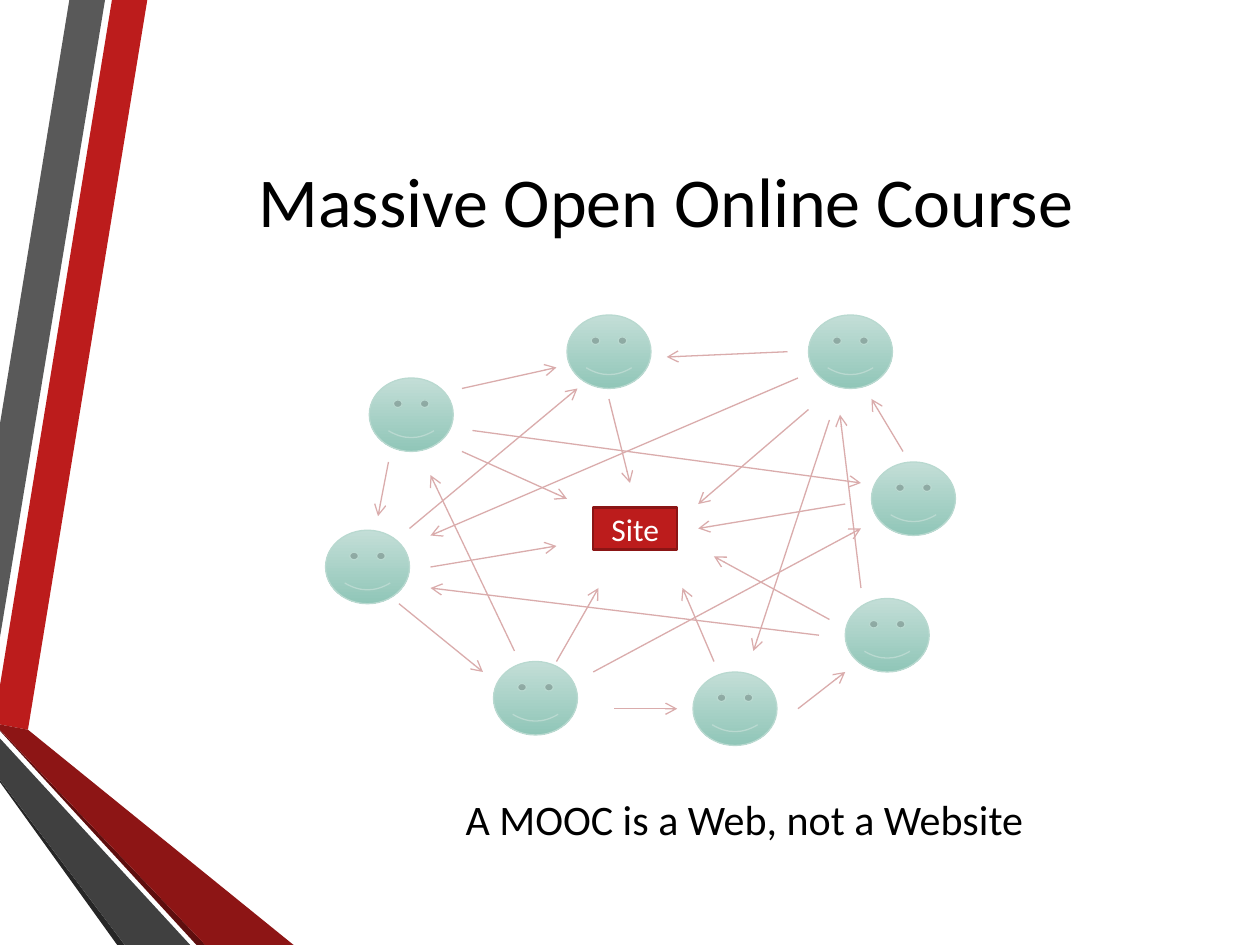
"""Build a slide showing a massive open online course as a web of people around a site."""
from lxml import etree
from pptx import Presentation
from pptx.dml.color import RGBColor
from pptx.enum.shapes import MSO_CONNECTOR, MSO_SHAPE
from pptx.enum.text import MSO_ANCHOR, MSO_AUTO_SIZE, PP_ALIGN
from pptx.oxml.ns import qn
from pptx.util import Pt

STRAIGHT = MSO_CONNECTOR.STRAIGHT
RECTANGLE, SMILEY = MSO_SHAPE.RECTANGLE, MSO_SHAPE.SMILEY_FACE
MIDDLE, TOP = MSO_ANCHOR.MIDDLE, MSO_ANCHOR.TOP
CENTER, LEFT = PP_ALIGN.CENTER, PP_ALIGN.LEFT
NO_FIT, FIT_SHAPE = MSO_AUTO_SIZE.NONE, MSO_AUTO_SIZE.SHAPE_TO_FIT_TEXT

BLACK = RGBColor(0x00, 0x00, 0x00)
WHITE = RGBColor(0xFF, 0xFF, 0xFF)
RED = RGBColor(0xBC, 0x1C, 0x1C)
CRIMSON = RGBColor(0x8D, 0x15, 0x15)
MAROON = RGBColor(0x5E, 0x0E, 0x0E)
GRAY = RGBColor(0x59, 0x59, 0x59)
CHARCOAL = RGBColor(0x40, 0x40, 0x40)
NEAR_BLACK = RGBColor(0x26, 0x26, 0x26)
SITE_EDGE = RGBColor(0x8B, 0x15, 0x15)
FACE_TOP = RGBColor(0xC3, 0xDE, 0xD7)
FACE_BOTTOM = RGBColor(0x90, 0xC6, 0xB8)
FACE_EDGE = RGBColor(0xB9, 0xD9, 0xD0)
ARROW = RGBColor(0xDA, 0xAC, 0xAC)

RIBBONS = [
    (RED, [(0, 391.7), (0, 414), (16, 417), (84.2, 0), (64, 0)]),
    (GRAY, [(60, 0), (39.6, 0), (0, 242), (0, 364)]),
    (NEAR_BLACK, [(0, 445.7), (0, 447), (67, 540), (71.3, 540)]),
    (MAROON, [(0, 417), (0, 417.6), (112.3, 540), (117.4, 540)]),
    (CRIMSON, [(0, 417), (117.4, 540), (167.8, 540), (16, 417), (0, 414)]),
    (CHARCOAL, [(0, 445.7), (71.3, 540), (108.7, 540), (0, 422)]),
]
FACES = [(498, 264), (483, 342), (462, 180), (396, 384),
         (282, 378), (186, 303), (211, 216), (324, 180)]
ARROWS_TO_SITE = [
    (462, 234, 399, 288), (483, 288, 399, 302), (474, 354, 408, 318),
    (408, 378, 390, 336), (348, 228, 360, 276), (264, 258, 324, 285),
    (246, 324, 318, 312), (318, 378, 342, 336),
]
ARROWS_BETWEEN_FACES = [
    (270, 246, 492, 276), (456, 216, 246, 306), (264, 222, 318, 210),
    (474, 240, 430.5, 372), (339, 384, 492, 302), (234, 302, 330, 222),
    (492, 336, 480, 237), (516, 258, 498, 228), (450, 201, 381, 204),
    (222, 264, 216, 295), (294, 372, 246, 271.5), (351, 405, 387, 405),
    (468, 363, 246, 336), (228, 345, 276, 384), (456, 405, 483, 384),
]


def write(sp, text, size, color, align=CENTER, anchor=MIDDLE, fit=NO_FIT):
    """Put one formatted line of text in a shape."""
    tf = sp.text_frame
    for name, value in {"word_wrap": True, "vertical_anchor": anchor, "auto_size": fit}.items():
        setattr(tf, name, value)
    p = tf.paragraphs[0]
    p.alignment = align
    r = p.add_run()
    r.text = text
    for name, value in {"name": "Calibri", "size": Pt(size), "bold": False}.items():
        setattr(r.font, name, value)
    r.font.color.rgb = color


def outline(sp, color, width):
    """Set the line colour and width of a shape or connector."""
    sp.line.color.rgb = color
    sp.line.width = Pt(width)


prs = Presentation()
prs.slide_width, prs.slide_height = Pt(720), Pt(540)
s = prs.slides.add_slide(prs.slide_layouts[5])

for color, points in RIBBONS:
    corners = [(Pt(x), Pt(y)) for x, y in points]
    builder = s.shapes.build_freeform(*corners[0])
    builder.add_line_segments(corners[1:], close=True)
    sp = builder.convert_to_shape()
    sp.shadow.inherit = False
    sp.fill.solid()
    sp.fill.fore_color.rgb = color
    sp.line.fill.background()

title = s.shapes.title
for name, value in {"left": 77, "top": 36, "width": 607, "height": 156}.items():
    setattr(title, name, Pt(value))
write(title, "Massive Open Online Course", 40, BLACK)

site = s.shapes.add_shape(RECTANGLE, Pt(339), Pt(290), Pt(48), Pt(24))
site.shadow.inherit = False
site.fill.solid()
site.fill.fore_color.rgb = RED
outline(site, SITE_EDGE, 1.25)
write(site, "Site", 18, WHITE)

for x, y in FACES:
    face = s.shapes.add_shape(SMILEY, Pt(x), Pt(y), Pt(48), Pt(42))
    face.shadow.inherit = False
    face.fill.gradient()
    face.fill.gradient_angle = 270
    for stop, color in zip(face.fill.gradient_stops, (FACE_TOP, FACE_BOTTOM)):
        stop.color.rgb = color
    outline(face, FACE_EDGE, 0.75)

for ends in ARROWS_TO_SITE + ARROWS_BETWEEN_FACES:
    arrow = s.shapes.add_connector(STRAIGHT, *[Pt(v) for v in ends])
    outline(arrow, ARROW, 0.75)
    etree.SubElement(arrow.line._get_or_add_ln(), qn("a:tailEnd"), type="arrow")
    etree.SubElement(arrow._element.spPr, qn("a:effectLst"))

caption = s.shapes.add_textbox(Pt(259), Pt(450), Pt(341), Pt(36))
write(caption, "A MOOC is a Web, not a Website", 24, BLACK, LEFT, TOP, FIT_SHAPE)

prs.save("out.pptx")
